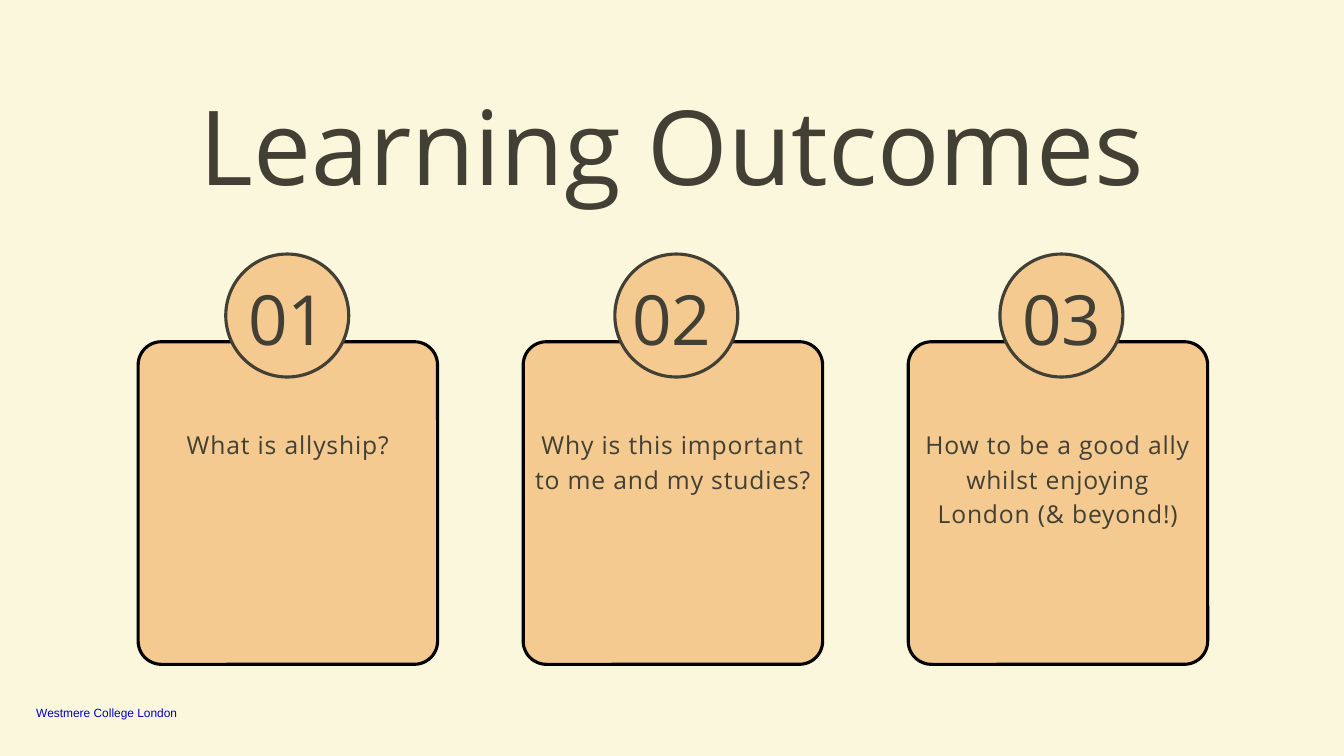
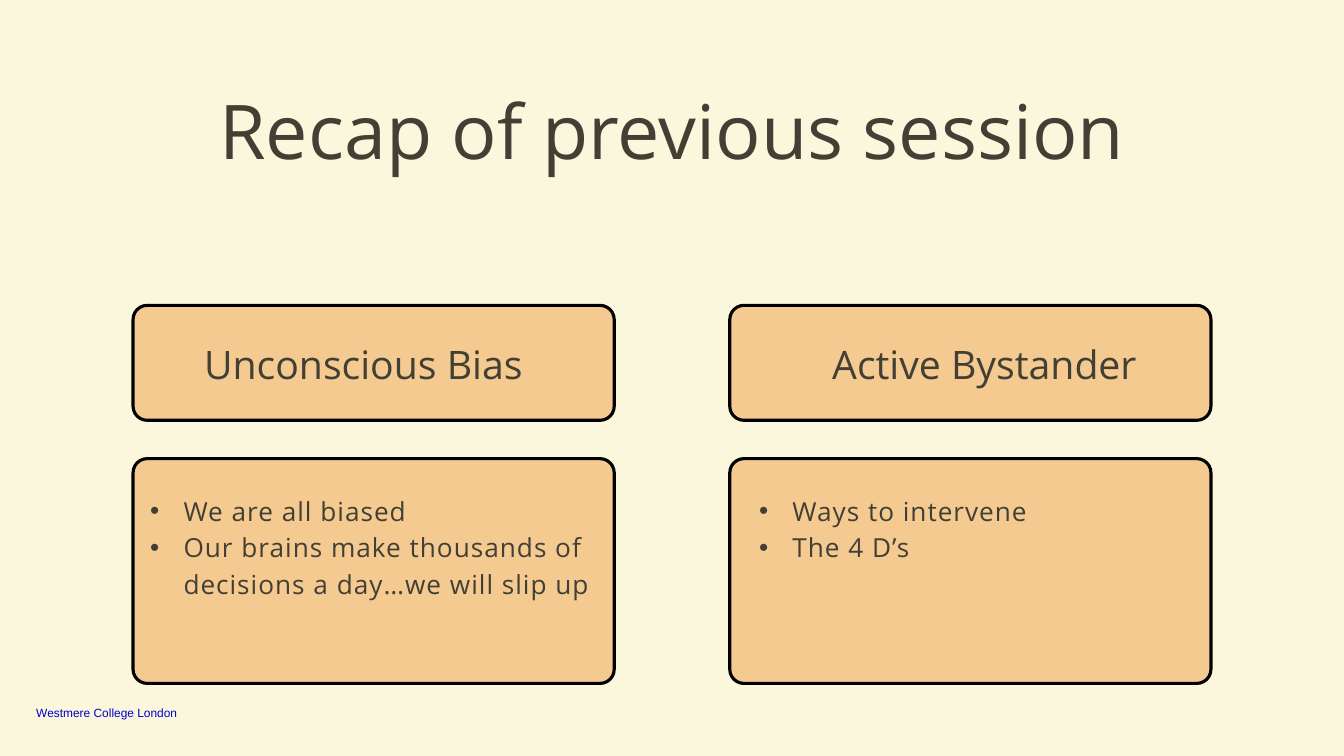
from dataclasses import dataclass

from pptx import Presentation
from pptx.dml.color import RGBColor
from pptx.enum.shapes import MSO_SHAPE
from pptx.enum.text import MSO_ANCHOR, MSO_AUTO_SIZE, PP_ALIGN
from pptx.util import Inches, Pt

CARD, BADGE = MSO_SHAPE.ROUNDED_RECTANGLE, MSO_SHAPE.OVAL
TOP, BOTTOM = MSO_ANCHOR.TOP, MSO_ANCHOR.BOTTOM
LEFT, CENTER = PP_ALIGN.LEFT, PP_ALIGN.CENTER
FIXED = MSO_AUTO_SIZE.NONE
TITLE_ONLY, TWO_CONTENT = 5, 3


@dataclass(frozen=True)
class Style:
    size: float
    leading: float = 0
    tracking: int = 0  # hundredths of a point
    align: int = CENTER
    font: str = "Open Sans"
    color: str = "423F34"
    anchor: int = TOP
    indent: float = 0
    wrap: bool = True


@dataclass(frozen=True)
class Theme:
    paper: str = "FBF7DC"
    peach: str = "F4CA91"
    ink: str = "423F34"
    black: str = "000000"
    outline: float = 2.25
    title: Style = Style(73.9, 93.9)
    long_title: Style = Style(53.9, 68.5)
    number: Style = Style(49.4, 62.8)
    heading: Style = Style(28, 35.6)
    card: Style = Style(17.6, 24.6, 60)
    bullets: Style = Style(18.7, 26.1, 70, LEFT, indent=0.33)
    footer: Style = Style(8.5, align=LEFT, font="Arial", color="0000CD",
                          anchor=BOTTOM, wrap=False)


theme = Theme()
deck = Presentation()
deck.slide_width, deck.slide_height = Inches(13.33), Inches(7.5)

# All areas are (left, top, width, height) in percent of the slide
COLUMN, ROW = deck.slide_width / 100, deck.slide_height / 100
GRID = (COLUMN, ROW, COLUMN, ROW)


def draw(page, kind, area, line, radius=0):
    """Draw a filled, outlined shape; radius is in inches."""
    shape = page.shapes.add_shape(kind, *(int(a * g) for a, g in zip(area, GRID)))
    shape.shadow.inherit = False
    shape.fill.solid()
    shape.fill.fore_color.rgb = RGBColor.from_string(theme.peach)
    shape.line.color.rgb = RGBColor.from_string(line)
    shape.line.width = Pt(theme.outline)
    if radius:
        shape.adjustments[0] = Inches(radius) / min(shape.width, shape.height)


def write(box, area, lines, style):
    """Place a text box or placeholder and fill it, one paragraph a line."""
    box.left, box.top, box.width, box.height = (int(a * g) for a, g in zip(area, GRID))
    frame = box.text_frame
    frame.margin_left = frame.margin_top = frame.margin_right = frame.margin_bottom = 0
    frame.auto_size = FIXED
    frame.word_wrap = style.wrap
    frame.vertical_anchor = style.anchor
    for index, line in enumerate(lines):
        para = frame.add_paragraph() if index else frame.paragraphs[0]
        para.alignment = style.align
        para.space_before = para.space_after = Pt(0)
        if style.leading:
            para.line_spacing = Pt(style.leading)
        if style.indent:
            properties = para._p.get_or_add_pPr()
            properties.set("marL", str(Inches(style.indent)))
            properties.set("indent", str(-Inches(style.indent)))
        span = para.add_run()
        span.text = line
        span.font.name = style.font
        span.font.size = Pt(style.size)
        span.font.color.rgb = RGBColor.from_string(style.color)
        if style.tracking:
            span.font._element.set("spc", str(style.tracking))


outcomes = deck.slides.add_slide(deck.slide_layouts[TITLE_ONLY])
recap = deck.slides.add_slide(deck.slide_layouts[TWO_CONTENT])

# Shared background and footer live on the master
master = deck.slide_master
master.background.fill.solid()
master.background.fill.fore_color.rgb = RGBColor.from_string(theme.paper)
footer = outcomes.shapes.add_textbox(0, 0, 0, 0)
write(footer, (2.7, 93.2, 11.62, 2), ["Westmere College London"], theme.footer)
footer.element.nvSpPr.cNvPr.set("id", "20")
master.shapes.element.append(footer.element)

# Learning outcomes: three numbered cards
write(outcomes.shapes.title, (5.63, 9.87, 88.75, 16.27),
      ["Learning Outcomes"], theme.title)
cards = [
    ("01", "What is allyship?", 16.8, 17.62),
    ("02", "Why is this important to me and my studies?", 45.75, 46.2),
    ("03", "How to be a good ally whilst enjoying London (& beyond!)", 74.4, 75.22),
]
for column, (number, question, badge_left, number_left) in enumerate(cards):
    left = 10.28 + 28.65 * column
    draw(outcomes, CARD, (left, 45.2, 22.28, 42.67), theme.black, 0.23)
    draw(outcomes, BADGE, (badge_left, 33.6, 9.15, 16.27), theme.ink)
    write(outcomes.shapes.add_textbox(0, 0, 0, 0),
          (number_left, 35.87, 7.58, 10.93), [number], theme.number)
    write(outcomes.shapes.add_textbox(0, 0, 0, 0),
          (left + 0.75, 56.27, 20.78, 13.73), [question], theme.card)

# Recap: two columns, each a heading panel above a list panel
write(recap.shapes.title, (5.63, 10.4, 88.75, 11.87),
      ["Recap of previous session"], theme.long_title)
topics = [
    ("Unconscious Bias", (12.45, 29.18), (11.18, 33.3),
     ["We are all biased",
      "Our brains make thousands of decisions a day…we will slip up"]),
    ("Active Bystander", (59.93, 26.63), (56.48, 28.58),
     ["Ways to intervene", "The 4 D’s"]),
]
for column, (heading, heading_span, list_span, points) in enumerate(topics):
    left = 9.9 + 44.4 * column
    for top, height in ((40.4, 15.2), (60.67, 29.73)):
        draw(recap, CARD, (left, top, 35.8, height), theme.black, 0.14)
    write(recap.shapes.add_textbox(0, 0, 0, 0),
          (heading_span[0], 44.67, heading_span[1], 6.27), [heading], theme.heading)
    body = recap.placeholders[column + 1]
    write(body, (list_span[0], 64.8, list_span[1], 14.27), points, theme.bullets)
    recap.shapes.element.append(body.element)  # bring the list in front of its panel

deck.save("out.pptx")
